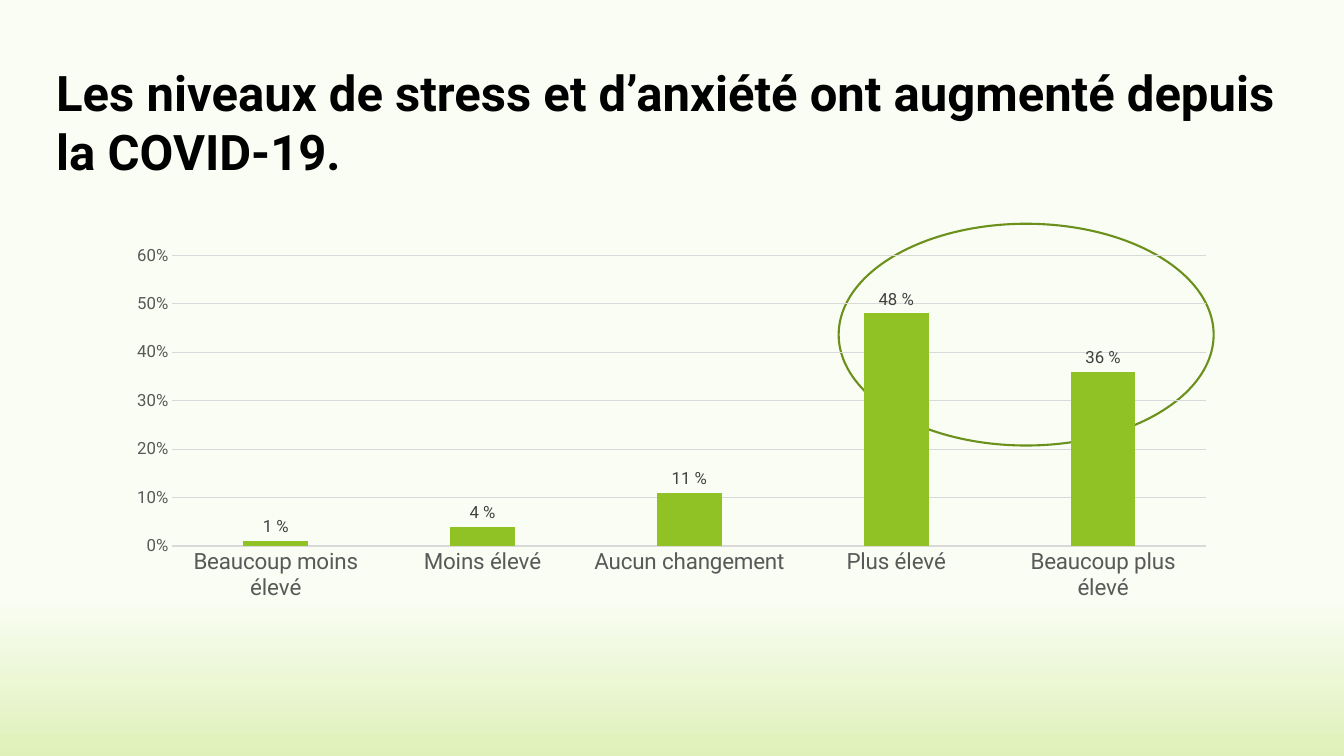
from pptx import Presentation
from pptx.chart.data import CategoryChartData
from pptx.dml.color import RGBColor
from pptx.enum import chart as kinds, shapes, text
from pptx.util import Pt

# Content
TITLE = "Les niveaux de stress et d’anxiété ont augmenté depuis la COVID-19."
LEVELS = [
    ("Beaucoup moins élevé", 0.01),
    ("Moins élevé", 0.04),
    ("Aucun changement", 0.11),
    ("Plus élevé", 0.48),
    ("Beaucoup plus élevé", 0.36),
]
BACKGROUND = [(0.79, "FAFDF3"), (1, "DFF1B9")]
FONT = "Roboto"

# Left, top, width, height in points
TITLE_AREA = (33.12, 41.04, 892.8, 67.68)
CHART_AREA = (82.08, 169.92, 795.6, 264.24)
HIGHLIGHT_AREA = (599.04, 159.84, 267.84, 158.4)


def color(value):
    return RGBColor.from_string(value)


def points(area):
    return [Pt(length) for length in area]


def style_font(font, size, value, bold=False):
    font.name, font.size, font.bold = FONT, Pt(size), bold
    font.color.rgb = color(value)


def style_line(line, value, width):
    line.color.rgb = color(value)
    line.width = Pt(width)


deck = Presentation()
deck.slide_width, deck.slide_height = Pt(960), Pt(540)
page = deck.slides.add_slide(deck.slide_layouts[6])

# Background fading to green at the bottom
fill = page.background.fill
fill.gradient()
fill.gradient_angle = 270
for stop, (position, value) in zip(fill.gradient_stops, BACKGROUND):
    stop.position = position
    stop.color.rgb = color(value)

# Ellipse around the two highest levels
highlight = page.shapes.add_shape(shapes.MSO_SHAPE.OVAL, *points(HIGHLIGHT_AREA))
highlight.shadow.inherit = False
highlight.fill.background()
style_line(highlight.line, "6B901C", 1.5)

# Title
box = page.shapes.add_textbox(*points(TITLE_AREA))
frame = box.text_frame
frame.word_wrap = True
frame.vertical_anchor = text.MSO_ANCHOR.TOP
frame.text = TITLE
style_font(frame.paragraphs[0].runs[0].font, 35, "000000", bold=True)

# Chart
data = CategoryChartData(number_format="0%")
data.categories = [level for level, share in LEVELS]
data.add_series("Series 1", [share for level, share in LEVELS])
chart = page.shapes.add_chart(
    kinds.XL_CHART_TYPE.COLUMN_CLUSTERED, *points(CHART_AREA), data
).chart
chart.has_legend = chart.has_title = False
style_font(chart.font, 10, "000000")

# Columns and their labels
plot = chart.plots[0]
plot.gap_width, plot.overlap = 219, -27
plot.vary_by_categories = False
columns = plot.series[0].format.fill
columns.solid()
columns.fore_color.rgb = color("90C226")
plot.has_data_labels = True
labels = plot.data_labels
labels.show_value = True
labels.number_format, labels.number_format_is_linked = r"0\ %", False
labels.position = kinds.XL_LABEL_POSITION.OUTSIDE_END
style_font(labels.font, 12, "404040")

# Axes
levels, shares = chart.category_axis, chart.value_axis
for axis, size in ((levels, 16), (shares, 12)):
    axis.major_tick_mark = axis.minor_tick_mark = kinds.XL_TICK_MARK.NONE
    style_font(axis.tick_labels.font, size, "595959")
style_line(levels.format.line, "D9D9D9", 0.75)
shares.format.line.fill.background()
shares.minimum_scale, shares.maximum_scale, shares.major_unit = 0, 0.6, 0.1
shares.tick_labels.number_format = "0%"
shares.tick_labels.number_format_is_linked = False
shares.has_major_gridlines = True
style_line(shares.major_gridlines.format.line, "D9D9D9", 0.75)

deck.save("out.pptx")
